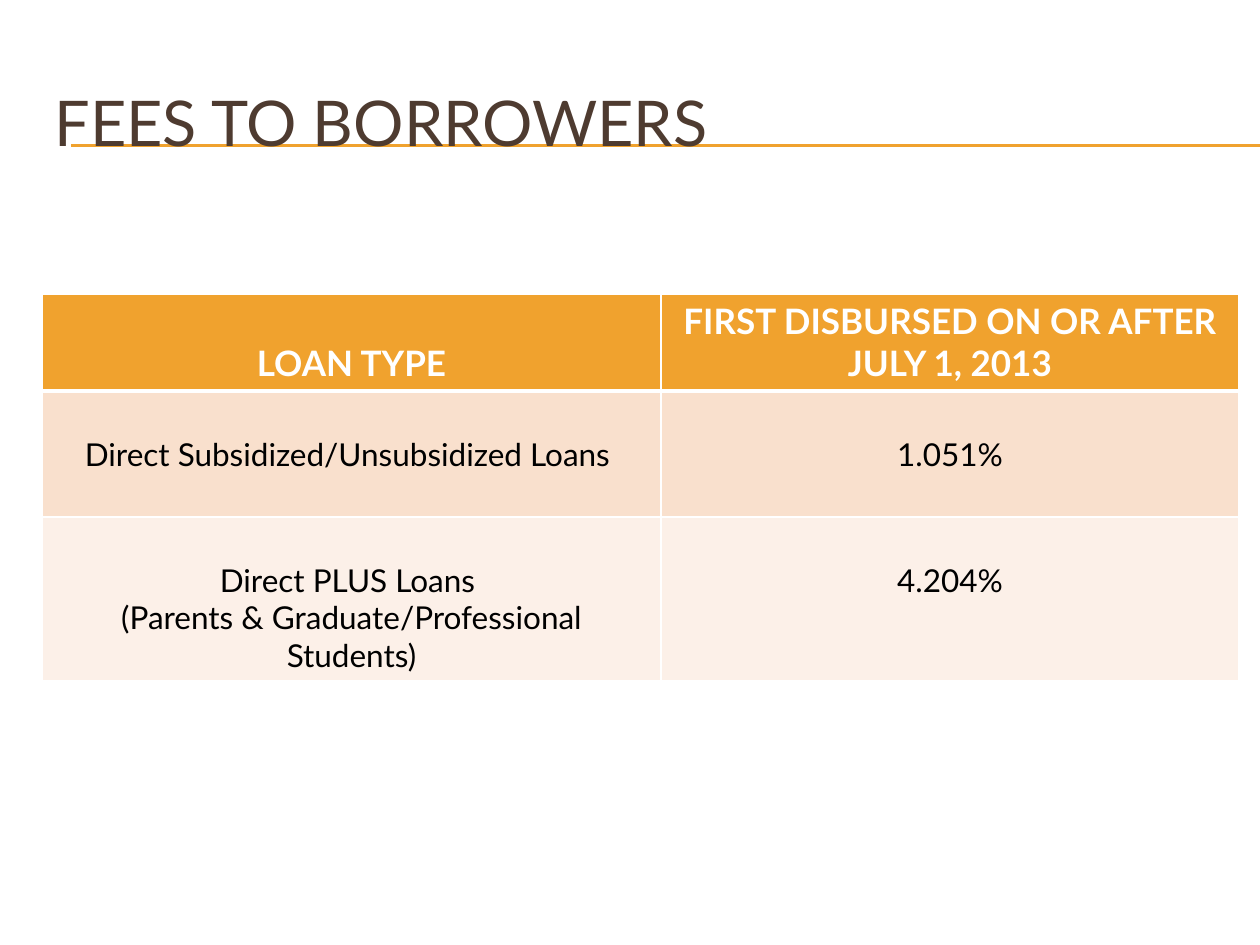
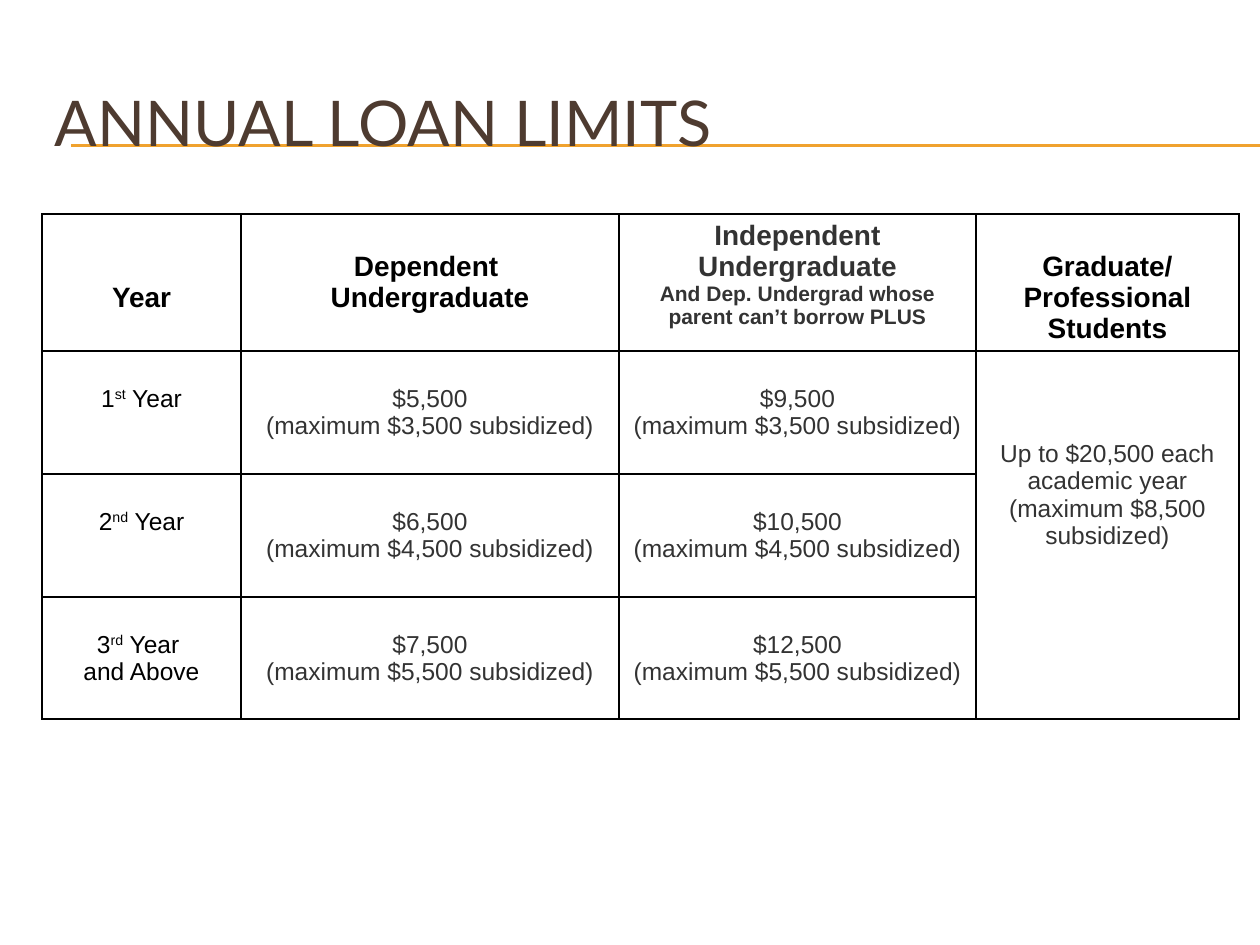
from dataclasses import dataclass, replace

from lxml.etree import SubElement
from pptx import Presentation
from pptx.dml.color import RGBColor as RGB
from pptx.enum.shapes import MSO_CONNECTOR as CONN
from pptx.enum.text import MSO_ANCHOR as ANCHOR, PP_ALIGN as ALIGN
from pptx.oxml.ns import qn
from pptx.util import Emu, Pt

PX_PER_INCH = 126
TITLE_ONLY = 5
LEFT, WIDTH, SLIDE_W, SLIDE_H = 42, 1197, 1260, 945
PAD = 6  # top inset of a table cell
COLORS = {
    "title": "4E3B30", "accent": "F0A22E", "white": "FFFFFF", "black": "000000",
    "gray": "333333", "band_dark": "F9E0CD", "band_light": "FCF0E8",
}


@dataclass(frozen=True)
class Look:
    font: str
    size: int
    color: str
    bold: bool = False


TITLE = Look("Lato", 36, "title")
FEE_HEAD = Look("Lato", 20, "white", True)
FEE_BODY = Look("Lato", 18, "black")
LIMIT_HEAD = Look("Arial", 16, "black", True)
LIMIT_HEAD_GRAY = replace(LIMIT_HEAD, color="gray")
LIMIT_NOTE = replace(LIMIT_HEAD_GRAY, size=12)
LIMIT_YEAR = Look("Arial", 14, "black")
LIMIT_BODY = replace(LIMIT_YEAR, color="gray")


def px(n):
    return Emu(round(n * 914400 / PX_PER_INCH))


def rgb(name):
    return RGB.from_string(COLORS[name])


def add_run(p, text, look, raised=False):
    r = p.add_run()
    r.text = text
    r.font.name, r.font.size, r.font.bold = look.font, Pt(look.size), look.bold
    r.font.color.rgb = rgb(look.color)
    if raised:
        r._r.get_or_add_rPr().set("baseline", "30000")


def write(tf, lines, look, align):
    """Write one paragraph per line; text between ^ marks is superscript."""
    for i, line in enumerate(lines):
        text, line_look = line if isinstance(line, tuple) else (line, look)
        p = tf.add_paragraph() if i else tf.paragraphs[0]
        p.alignment = align
        for j, part in enumerate(text.split("^")):
            add_run(p, part, line_look, raised=j % 2 == 1)


def add_titled_slide(prs, text):
    slide = prs.slides.add_slide(prs.slide_layouts[TITLE_ONLY])
    title = slide.shapes.title
    title.left, title.top, title.width, title.height = map(px, (LEFT, 63, WIDTH, 116))
    title.text_frame.vertical_anchor = ANCHOR.MIDDLE
    write(title.text_frame, [text], TITLE, ALIGN.LEFT)
    for y in (145, 146):
        rule = slide.shapes.add_connector(CONN.STRAIGHT, px(71), px(y), px(SLIDE_W), px(y))
        rule.line.color.rgb = rgb("accent")
        rule.line.width = Pt(0.75)
        SubElement(rule.element.spPr, qn("a:effectLst"))
        title.element.addprevious(rule.element)
    return slide


def set_borders(cell, color, bottom=1):
    tc_pr = cell._tc.get_or_add_tcPr()
    for i, (side, width) in enumerate(zip("LRTB", (1, 1, 1, bottom))):
        ln = SubElement(tc_pr, qn(f"a:ln{side}"), w=str(Pt(width)))
        SubElement(SubElement(ln, qn("a:solidFill")), qn("a:srgbClr"), val=COLORS[color])
        tc_pr.insert(i, ln)


def add_table(slide, top, widths, heights):
    frame = slide.shapes.add_table(len(heights), len(widths), px(LEFT), px(top),
                                   px(sum(widths)), px(sum(heights)))
    table = frame.table
    table.first_row = table.horz_banding = False
    for col, width in zip(table.columns, widths):
        col.width = px(width)
    for row, height in zip(table.rows, heights):
        row.height = px(height)
    return table


def fill_cell(cell, lines, look, drop=0, fill=None):
    """Write centred lines, lowered by drop px below the normal inset."""
    if fill:
        cell.fill.solid()
        cell.fill.fore_color.rgb = rgb(fill)
    else:
        cell.fill.background()
    cell.margin_top = px(PAD + drop)
    cell.vertical_anchor = ANCHOR.TOP
    write(cell.text_frame, lines, look, ALIGN.CENTER)


def add_fees_slide(prs):
    slide = add_titled_slide(prs, "FEES TO BORROWERS")
    table = add_table(slide, 294, (619, 578), (97, 126, 163))
    heads = [(["LOAN TYPE"], 42), (["FIRST DISBURSED ON OR AFTER", "JULY 1, 2013"], 0)]
    for c, (lines, drop) in enumerate(heads):
        fill_cell(table.cell(0, c), lines, FEE_HEAD, drop, "accent")
        set_borders(table.cell(0, c), "white", bottom=3)
    fees = [
        (["Direct Subsidized/Unsubsidized Loans "], "1.051%", "band_dark"),
        (["Direct PLUS Loans ", "(Parents & Graduate/Professional Students)"],
         "4.204%", "band_light"),
    ]
    for r, (loan, fee, band) in enumerate(fees, 1):
        for c, lines in enumerate((loan, [fee])):
            fill_cell(table.cell(r, c), lines, FEE_BODY, 38, band)
            set_borders(table.cell(r, c), "white")


def add_limits_slide(prs):
    slide = add_titled_slide(prs, "ANNUAL LOAN LIMITS")
    table = add_table(slide, 214, (199, 378, 357, 263), (137, 123, 123, 122))
    heads = [
        (["Year"], 62),
        (["Dependent ", "Undergraduate"], 31),
        ([("Independent Undergraduate", LIMIT_HEAD_GRAY),
          ("And Dep. Undergrad whose parent can’t borrow PLUS", LIMIT_NOTE)], 0),
        (["Graduate/", "Professional Students"], 31),
    ]
    for c, (lines, drop) in enumerate(heads):
        fill_cell(table.cell(0, c), lines, LIMIT_HEAD, drop)
    limits = [
        (["1^st^ Year"], "$5,500", "$9,500", "$3,500"),
        (["2^nd^ Year"], "$6,500", "$10,500", "$4,500"),
        (["3^rd^ Year ", "and Above"], "$7,500", "$12,500", "$5,500"),
    ]
    for r, (year, dependent, independent, subsidized) in enumerate(limits, 1):
        fill_cell(table.cell(r, 0), year, LIMIT_YEAR, 28)
        for c, amount in enumerate((dependent, independent), 1):
            lines = [amount, f"(maximum {subsidized} subsidized)"]
            fill_cell(table.cell(r, c), lines, LIMIT_BODY, 28)
    graduate = table.cell(1, 3)
    graduate.merge(table.cell(3, 3))
    fill_cell(graduate, ["Up to $20,500 each academic year (maximum $8,500 subsidized)"],
              LIMIT_BODY, 83)
    for cell in table.iter_cells():
        set_borders(cell, "black")


def main():
    prs = Presentation()
    prs.slide_width, prs.slide_height = px(SLIDE_W), px(SLIDE_H)
    add_fees_slide(prs)
    add_limits_slide(prs)
    prs.save("out.pptx")


if __name__ == "__main__":
    main()
